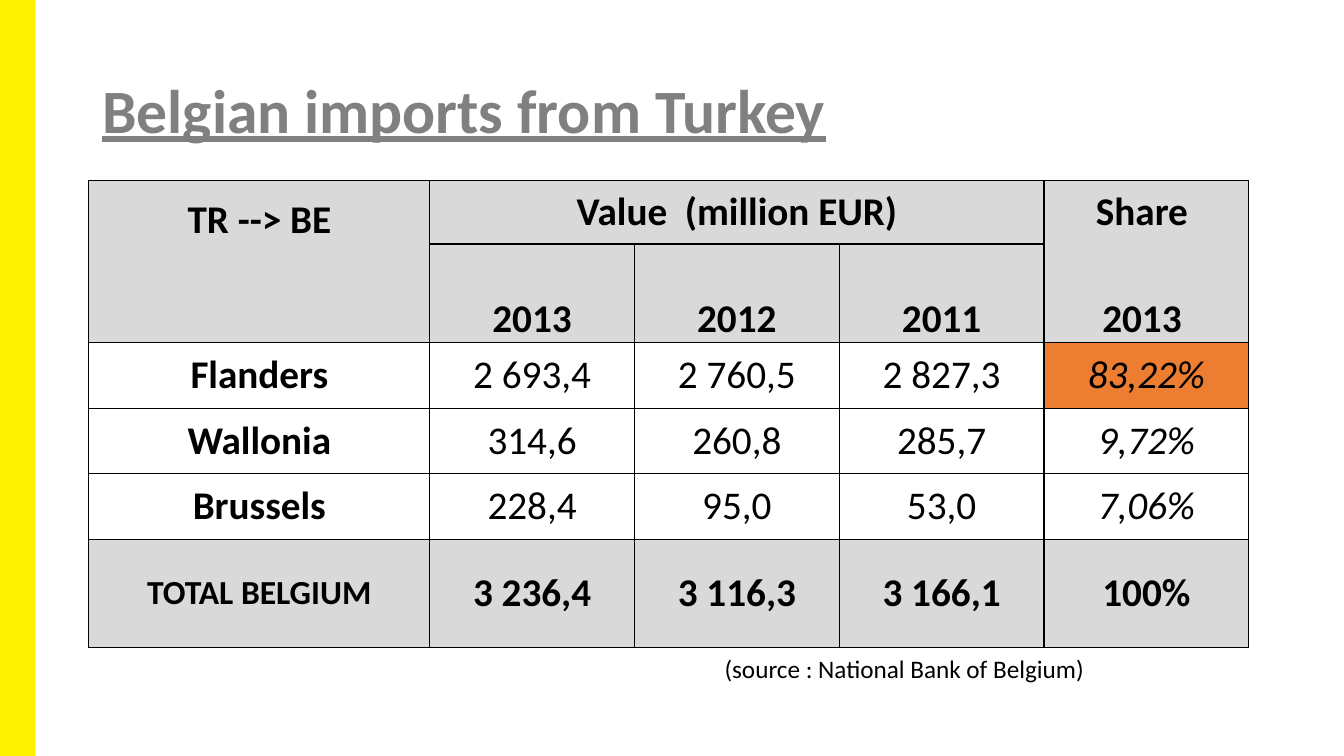
"""Build the slide on Belgian imports from Turkey."""
from lxml.etree import SubElement
from pptx import Presentation
from pptx.dml.color import RGBColor
from pptx.enum.shapes import MSO_SHAPE
from pptx.enum.text import MSO_ANCHOR, PP_ALIGN
from pptx.oxml import parse_xml
from pptx.oxml.ns import nsdecls
from pptx.util import Cm, Pt


def paint(color, code):
    color.rgb = RGBColor.from_string(code)


def label(slide, text, box, size, code):
    shape = slide.shapes.add_textbox(*map(Cm, box))
    shape.text_frame.text = text
    font = shape.text_frame.paragraphs[0].runs[0].font
    font.name, font.size = "Calibri", Pt(size)
    paint(font.color, code)
    return shape.text_frame, font


deck = Presentation()
deck.slide_width, deck.slide_height = Cm(33.87), Cm(19.05)
slide = deck.slides.add_slide(deck.slide_layouts[6])

band = slide.shapes.add_shape(MSO_SHAPE.RECTANGLE, 0, 0, Cm(0.9), Cm(19.05))
band.shadow.inherit = False
band.fill.solid()
paint(band.fill.fore_color, "FFF200")
band.line.fill.background()

title, font = label(slide, "Belgian imports from Turkey", (2.33, 1.01, 29.21, 3.68), 44, "808080")
title.word_wrap = True
title.vertical_anchor = MSO_ANCHOR.MIDDLE
title.paragraphs[0].line_spacing = 0.9
font.bold = font.underline = True

data = [
    ["TR --> BE", "Value  (million EUR)", "", "", "Share "],
    ["", "2013", "2012", "2011", "2013 "],
    ["Flanders", "2 693,4", "2 760,5", "2 827,3", "83,22%"],
    ["Wallonia", "314,6", "260,8", "285,7", "9,72%"],
    ["Brussels", "228,4", "95,0", "53,0", "7,06%"],
    ["TOTAL BELGIUM", "3 236,4", "3 116,3", "3 166,1", "100%"],
]
widths = [8.59] + [5.16] * 4
heights = [1.6, 2.49, 1.65, 1.65, 1.65, 2.72]
last = len(data) - 1
table = slide.shapes.add_table(
    len(data), len(widths), Cm(2.24), Cm(4.55), Cm(sum(widths)), Cm(sum(heights))
).table
for col, width in zip(table.columns, widths):
    col.width = Cm(width)
for row, height in zip(table.rows, heights):
    row.height = Cm(height)

for r, row in enumerate(data):
    for c, text in enumerate(row):
        cell = table.cell(r, c)
        grey = r < 2 or r == last
        low = r == 1 or (r, c) == (0, 0)
        cell.margin_left = cell.margin_right = Cm(0.15)
        cell.margin_top = cell.margin_bottom = 0
        cell.vertical_anchor = MSO_ANCHOR.BOTTOM if low else MSO_ANCHOR.MIDDLE

        props = cell._tc.get_or_add_tcPr()
        for side in "LRTB":
            line = SubElement(props, parse_xml(f"<a:ln{side} {nsdecls('a')}/>").tag, w="12700")
            open_side = c in (0, 4) and (r, side) in ((0, "B"), (1, "T"))
            paint_xml = "<a:noFill %s/>" if open_side else (
                '<a:solidFill %s><a:srgbClr val="000000"/></a:solidFill>')
            line.append(parse_xml(paint_xml % nsdecls("a")))
        if grey or (r, c) == (2, 4):
            cell.fill.solid()
            paint(cell.fill.fore_color, "D9D9D9" if grey else "ED7D31")
        else:
            cell.fill.background()

        cell.text_frame.text = text
        para = cell.text_frame.paragraphs[0]
        para.alignment = PP_ALIGN.CENTER
        if r > 1 and c and text != "100%":
            para.space_after = Pt(12)
        for run in para.runs:
            font = run.font
            font.name = "Calibri"
            font.size = Pt(24 if (r, c) == (last, 0) else 28)
            font.bold = grey or c == 0
            font.italic = c == 4 and not grey
            paint(font.color, "000000")
table.cell(0, 1).merge(table.cell(0, 3))

note, font = label(
    slide, "(source : National Bank of Belgium)", (18.01, 16.33, 9.68, 1.02), 18, "000000")
note.word_wrap = False

deck.save("out.pptx")
